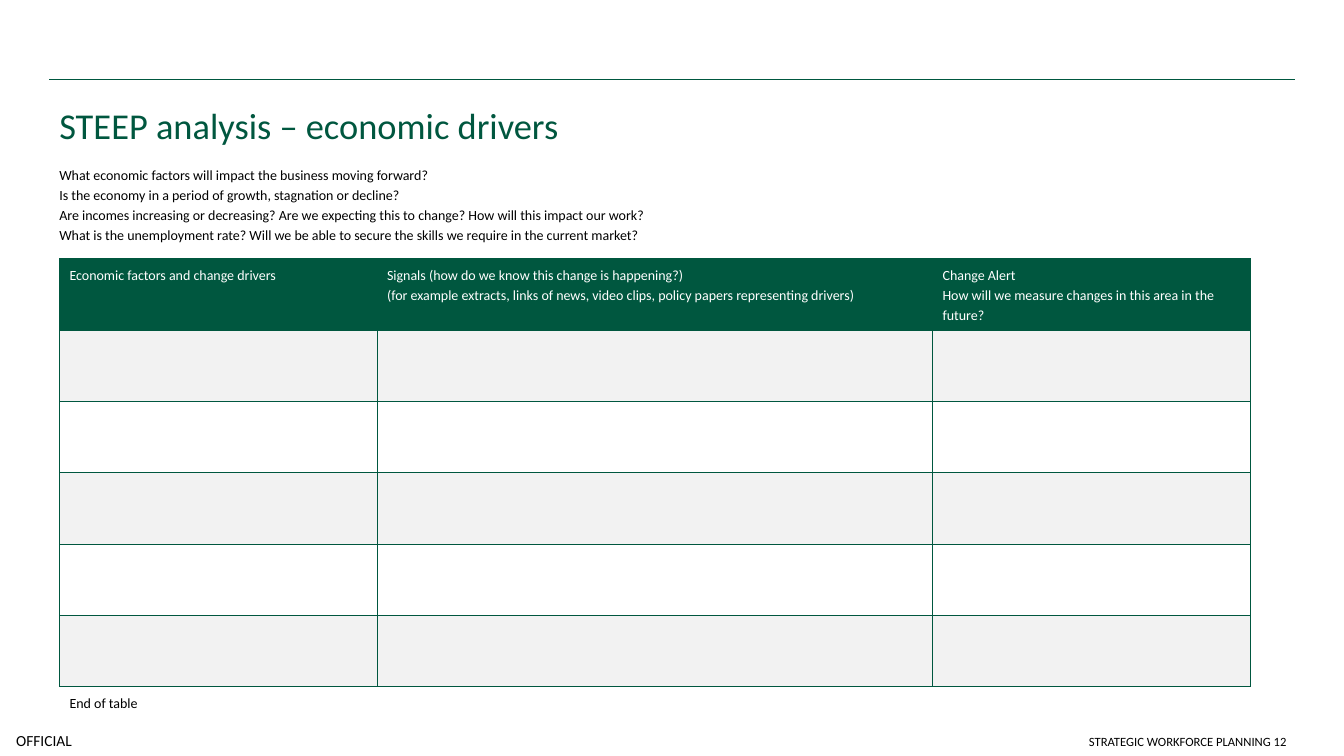
"""Build the STEEP economic drivers slide with its blank working table."""
from lxml import etree
from pptx import Presentation, util as u
from pptx.dml.color import RGBColor
from pptx.enum import shapes, text
from pptx.oxml import ns

TITLE = "STEEP analysis – economic drivers"
QUESTIONS = [
    "What economic factors will impact the business moving forward?",
    "Is the economy in a period of growth, stagnation or decline?",
    "Are incomes increasing or decreasing? Are we expecting this to change? How will this impact our work?",
    "What is the unemployment rate? Will we be able to secure the skills we require in the current market?",
]
HEADINGS = [
    ["Economic factors and change drivers"],
    ["Signals (how do we know this change is happening?)",
     "(for example extracts, links of news, video clips, policy papers representing drivers)"],
    ["Change Alert", "How will we measure changes in this area in the future?"],
]
BLANK_ROWS = 5
TABLE_END = "End of table"
MARKING = "OFFICIAL"
FOOTER = "STRATEGIC WORKFORCE PLANNING 12"

THEME = {
    "font": "Calibri", "green": "00573F", "black": "000000", "white": "FFFFFF", "band": "F2F2F2",
    "title": 26, "body": 10, "marking": 11, "footer": 9,
}
SLIDE_SIZE = (960, 540)
LEFT, WIDTH = 35.3, 889.9
TABLE_LEFT, TABLE_TOP = 42.5, 184.6
COLUMN_WIDTHS = [226.8, 396.8, 226.8]
ROW_HEIGHT, END_HEIGHT = 51, 28
BORDER_WIDTH = 0.5


def color(name):
    return RGBColor.from_string(THEME[name])


def write(frame, lines, size="body", ink="black", spacing=1.2, align=None):
    for index, line in enumerate(lines):
        paragraph = frame.paragraphs[0] if index == 0 else frame.add_paragraph()
        paragraph.line_spacing = spacing
        paragraph.alignment = align
        run = paragraph.add_run()
        run.text = line
        run.font.name = THEME["font"]
        run.font.size = u.Pt(THEME[size])
        run.font.color.rgb = color(ink)


def add_text(slide, box, lines, anchor=text.MSO_ANCHOR.TOP, margins=None, **style):
    frame = slide.shapes.add_textbox(*map(u.Pt, box)).text_frame
    frame.word_wrap = True
    frame.vertical_anchor = anchor
    if margins:
        (frame.margin_left, frame.margin_top,
         frame.margin_right, frame.margin_bottom) = map(u.Pt, margins)
    write(frame, lines, **style)


def add_rule(slide, top):
    rule = slide.shapes.add_connector(
        shapes.MSO_CONNECTOR.STRAIGHT, *map(u.Pt, (LEFT, top, LEFT + WIDTH, top)))
    rule.line.color.rgb = color("green")
    rule.line.width = u.Pt(1)
    etree.SubElement(rule._element.spPr, ns.qn("a:effectLst"))


def set_borders(cell, sides):
    properties = cell._tc.get_or_add_tcPr()
    for side in "LRTB":
        line = etree.SubElement(properties, ns.qn(f"a:ln{side}"))
        if side in sides:
            line.set("w", str(u.Pt(BORDER_WIDTH)))
            fill = etree.SubElement(line, ns.qn("a:solidFill"))
            etree.SubElement(fill, ns.qn("a:srgbClr"), val=THEME["green"])
        else:
            etree.SubElement(line, ns.qn("a:noFill"))


def add_drivers_table(slide):
    last = BLANK_ROWS + 1
    heights = [ROW_HEIGHT] * last + [END_HEIGHT]
    box = (TABLE_LEFT, TABLE_TOP, sum(COLUMN_WIDTHS), sum(heights))
    table = slide.shapes.add_table(
        len(heights), len(COLUMN_WIDTHS), *map(u.Pt, box)).table
    table.horz_banding = False
    for column, width in zip(table.columns, COLUMN_WIDTHS):
        column.width = u.Pt(width)
    for row_index, (row, height) in enumerate(zip(table.rows, heights)):
        row.height = u.Pt(height)
        banded = row_index % 2 == 1
        fill = "green" if row_index == 0 else "band" if banded else "white"
        for column_index, cell in enumerate(row.cells):
            set_borders(cell, "T" if row_index == last else "LRTB")
            cell.fill.solid()
            cell.fill.fore_color.rgb = color(fill)
            if row_index == 0:
                write(cell.text_frame, HEADINGS[column_index], ink="white")
            elif row_index == last and column_index == 0:
                write(cell.text_frame, [TABLE_END])
            else:
                etree.SubElement(cell.text_frame.paragraphs[0]._p, ns.qn("a:endParaRPr"),
                                 sz=str(THEME["body"] * 100))


def main():
    presentation = Presentation()
    presentation.slide_width, presentation.slide_height = map(u.Pt, SLIDE_SIZE)
    slide = presentation.slides.add_slide(presentation.slide_layouts[6])
    add_rule(slide, 56.6)
    add_text(slide, (0, 517.7, 62.6, 22.3), [MARKING], anchor=text.MSO_ANCHOR.MIDDLE,
             margins=(11.5, 0, 0, 0), size="marking", spacing=1)
    add_text(slide, (LEFT, 64.1, WIDTH, 73.4), [TITLE], size="title", ink="green")
    add_text(slide, (LEFT, 113, WIDTH, 70.6), QUESTIONS)
    add_drivers_table(slide)
    add_text(slide, (492.5, 510.5, 433.4, 28.1), [FOOTER], anchor=text.MSO_ANCHOR.BOTTOM,
             size="footer", spacing=1, align=text.PP_ALIGN.RIGHT)
    presentation.save("out.pptx")


if __name__ == "__main__":
    main()
